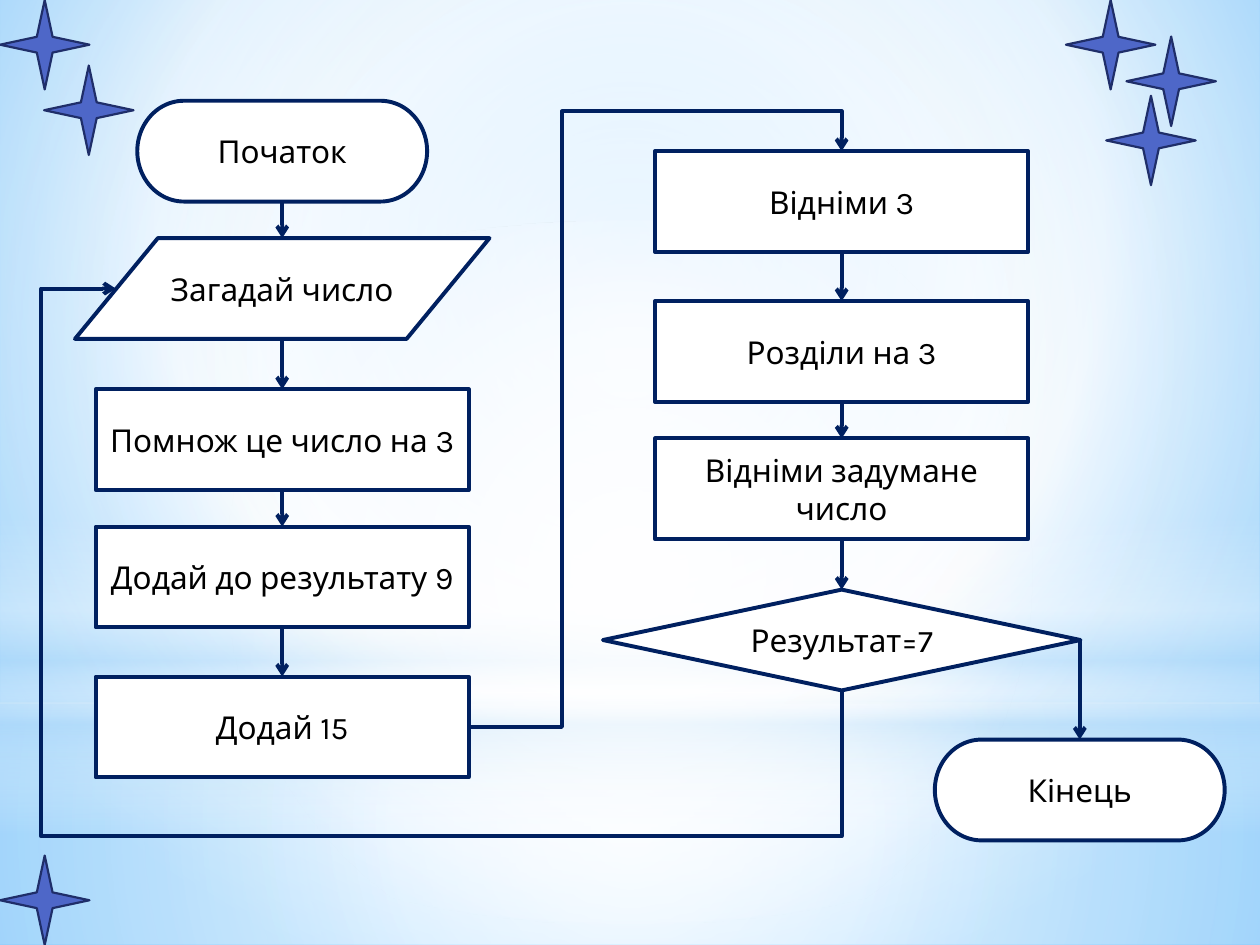
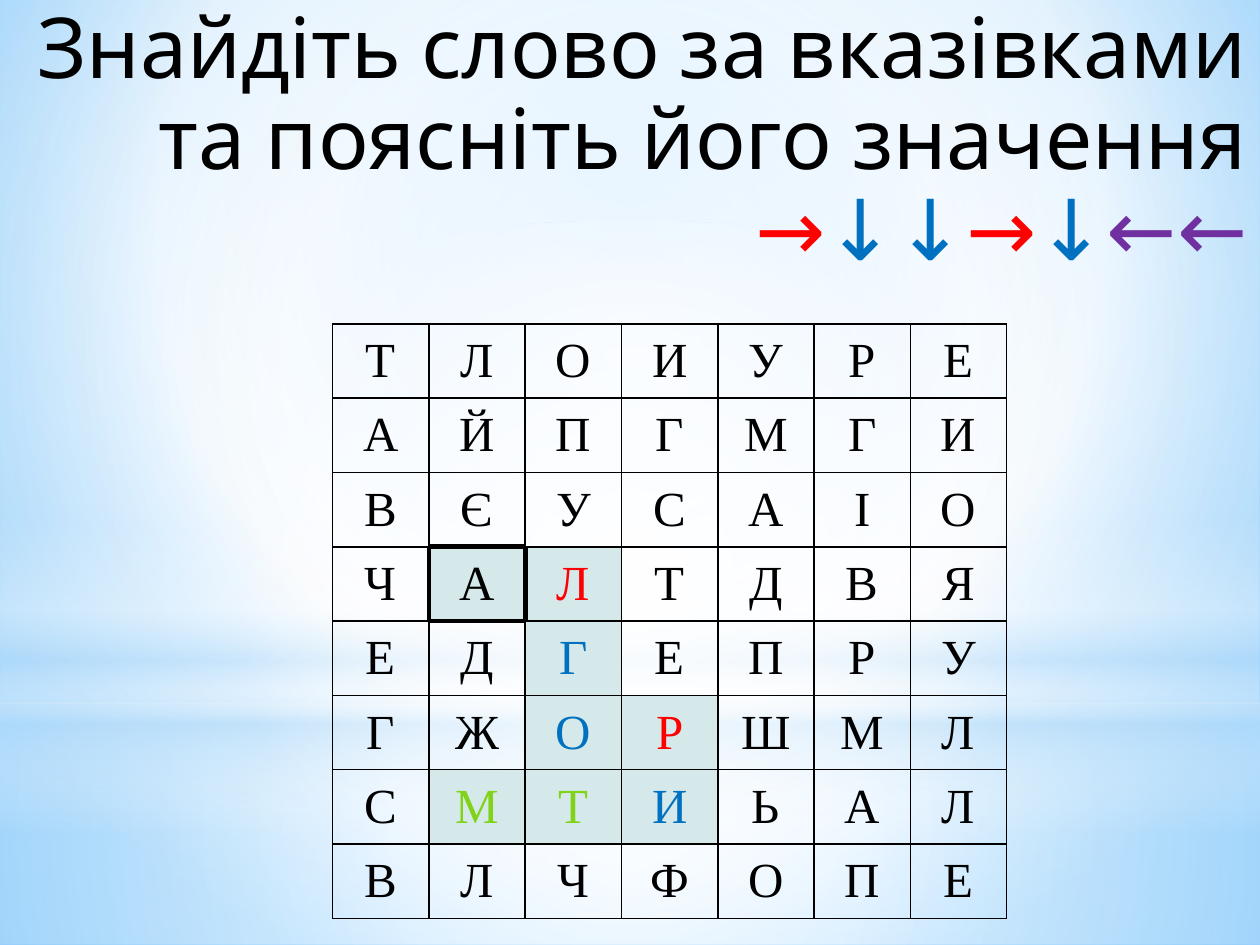
import pptx
import pptx.dml.color
import pptx.enum.shapes
import pptx.enum.text
import pptx.oxml
import pptx.oxml.ns
import pptx.util

Inches = pptx.util.Inches
Pt = pptx.util.Pt
RGBColor = pptx.dml.color.RGBColor
MSO_SHAPE = pptx.enum.shapes.MSO_SHAPE
MSO_CONNECTOR = pptx.enum.shapes.MSO_CONNECTOR
PP_ALIGN = pptx.enum.text.PP_ALIGN
MSO_ANCHOR = pptx.enum.text.MSO_ANCHOR
qn = pptx.oxml.ns.qn

WHITE = RGBColor(0xFF, 0xFF, 0xFF)
BLACK = RGBColor(0, 0, 0)
NAVY = RGBColor(0x00, 0x20, 0x60)
STAR_FILL = RGBColor(0x4E, 0x67, 0xC8)
STAR_LINE = RGBColor(0x1F, 0x2E, 0x69)
RED = RGBColor(0xFF, 0, 0)
BLUE = RGBColor(0x00, 0x70, 0xC0)
PURPLE = RGBColor(0x70, 0x30, 0xA0)
GREEN = RGBColor(0x81, 0xD3, 0x1A)
ROUTE_FILL = RGBColor(0xD6, 0xE9, 0xEA)
SKY = RGBColor(0x9E, 0xD5, 0xFF)
DEEP_SKY = RGBColor(0x5B, 0xB9, 0xFF)
PALE_SKY = RGBColor(0xB4, 0xDC, 0xFA)

STEP_TEXT = {"name": "Karla", "size": Pt(18)}
TITLE_TEXT = {"name": "Karla", "size": Pt(48)}
LETTER_TEXT = {"name": "Times New Roman", "size": Pt(28)}

CENTRE = (50, 50, 50, 50)
BACKDROP = [(0, SKY, 100), (60, WHITE, 100), (100, DEEP_SKY, 100)]
BANDS = [
    (MSO_SHAPE.RECTANGLE, 5.58, 1.92, CENTRE,
     [(0, WHITE, 91), (37, WHITE, 76), (100, PALE_SKY, 79)]),
    (MSO_SHAPE.RECTANGLE, 0, 5.58, CENTRE,
     [(0, WHITE, 89), (48, WHITE, 62), (100, PALE_SKY, 79)]),
    (MSO_SHAPE.RECTANGLE, 4.12, 2.5, None,
     [(0, WHITE, 0), (29, WHITE, 30), (45, PALE_SKY, 40),
      (55, WHITE, 26), (65, PALE_SKY, 60), (100, WHITE, 0)]),
    (MSO_SHAPE.OVAL, 1.75, 5.58, CENTRE, [(0, WHITE, 100), (56, WHITE, 0)]),
]

STEP_HEIGHT = 0.8
LEFT_AXIS, RIGHT_AXIS = 2.24, 6.68
TERMINATOR = (MSO_SHAPE.FLOWCHART_TERMINATOR, 2.3)
INPUT = (MSO_SHAPE.FLOWCHART_DATA, 3.29)
ACTION = (MSO_SHAPE.RECTANGLE, 2.96)
DECISION = (MSO_SHAPE.FLOWCHART_DECISION, 3.79)
LEFT_STEPS = [
    (0.8, TERMINATOR, "Початок"),
    (1.89, INPUT, "Загадай число"),
    (3.09, ACTION, "Помнож це число на 3"),
    (4.18, ACTION, "Додай до результату 9"),
    (5.37, ACTION, "Додай 15"),
]
RIGHT_STEPS = [
    (1.2, ACTION, "Відніми 3"),
    (2.39, ACTION, "Розділи на 3"),
    (3.48, ACTION, "Відніми задумане число"),
    (4.68, DECISION, "Результат=7"),
]
STAR_SIZE = 0.71
STARS = [(8.94, 0.29), (8.78, 0.76), (8.46, 0), (0, 6.79), (0, 0), (0.35, 0.52)]

LETTERS = ["ТЛОИУРЕ", "АЙПГМГИ", "ВЄУСАІО", "ЧАЛТДВЯ",
           "ЕДГЕПРУ", "ГЖОРШМЛ", "СМТИЬАЛ", "ВЛЧФОПЕ"]
START = (3, 1)
ROUTE = "→↓↓→↓←←"
MOVES = {"→": (0, 1), "↓": (1, 0), "←": (0, -1)}
ARROW_COLOURS = {"→": RED, "↓": BLUE, "←": PURPLE}
LETTER_COLOURS = {"→": RED, "↓": BLUE, "←": GREEN}


def add_xml(parent, tag, **attributes):
    element = parent.makeelement(qn(tag), {k: str(v) for k, v in attributes.items()})
    parent.append(element)
    return element


def set_gradient(fill, owner, stops, focus):
    fill.gradient()
    gradient = next(owner.iter(qn("a:gradFill")))
    gradient.clear()
    stop_list = add_xml(gradient, "a:gsLst")
    for position, colour, opacity in stops:
        stop = add_xml(stop_list, "a:gs", pos=position * 1000)
        tint = add_xml(stop, "a:srgbClr", val=colour)
        if opacity < 100:
            add_xml(tint, "a:alpha", val=opacity * 1000)
    if focus:
        sides = {side: value * 1000 for side, value in zip("ltrb", focus)}
        add_xml(add_xml(gradient, "a:path", path="circle"), "a:fillToRect", **sides)
    else:
        add_xml(gradient, "a:lin", ang=90 * 60000, scaled=0)


class Deck:
    def __init__(self):
        self.show = pptx.Presentation()
        self.show.slide_width, self.show.slide_height = Inches(10), Inches(7.5)
        self.slide = None

    def new_slide(self, layout):
        self.slide = self.show.slides.add_slide(self.show.slide_layouts[layout])

    def dress_master(self):
        master = self.show.slide_master
        set_gradient(master.background.fill, master.element, BACKDROP, (20, 10, 20, 60))
        tree = master.shapes.element if hasattr(master.shapes, "element") else None
        tree = master.element.cSld.spTree if tree is None else tree
        for order, (kind, top, height, focus, stops) in enumerate(BANDS):
            band = self.shape(kind, 0, top, 10, height, WHITE)
            set_gradient(band.fill, band.element.spPr, stops, focus)
            band.element.nvSpPr.cNvPr.set("id", str(100 + order))
            tree.insert(2 + order, band.element)

    def style(self, font, look, colour):
        for name, value in look.items():
            setattr(font, name, value)
        font.color.rgb = colour

    def shape(self, kind, left, top, width, height, fill, line=None, weight=0):
        shape = self.slide.shapes.add_shape(
            kind, Inches(left), Inches(top), Inches(width), Inches(height))
        shape.shadow.inherit = False
        shape.fill.solid()
        shape.fill.fore_color.rgb = fill
        if line is None:
            shape.line.fill.background()
        else:
            shape.line.color.rgb = line
            shape.line.width = Pt(weight)
        return shape

    def step(self, axis, top, form, wording):
        kind, width = form
        step = self.shape(kind, axis - width / 2, top, width, STEP_HEIGHT, WHITE, NAVY, 2.25)
        step.text_frame.vertical_anchor = MSO_ANCHOR.MIDDLE
        paragraph = step.text_frame.paragraphs[0]
        paragraph.alignment = PP_ALIGN.CENTER
        run = paragraph.add_run()
        run.text = wording
        self.style(run.font, STEP_TEXT, BLACK)

    def column(self, axis, steps):
        for top, form, wording in steps:
            self.step(axis, top, form, wording)
        for upper, lower in zip(steps, steps[1:]):
            self.arrow(axis, upper[0] + STEP_HEIGHT, axis, lower[0])

    def arrow(self, x1, y1, x2, y2, kind=MSO_CONNECTOR.STRAIGHT):
        arrow = self.slide.shapes.add_connector(
            kind, Inches(x1), Inches(y1), Inches(x2), Inches(y2))
        arrow.line.color.rgb = NAVY
        arrow.line.width = Pt(2.25)
        properties = arrow.element.spPr
        add_xml(properties.find(qn("a:ln")), "a:tailEnd", type="arrow")
        add_xml(properties, "a:effectLst")
        return arrow

    def elbow(self, x1, y1, x2, y2, bends, turn=0):
        properties = self.arrow(x1, y1, x2, y2, MSO_CONNECTOR.ELBOW).element.spPr
        properties.find(qn("a:xfrm")).set("rot", str(turn * 60000))
        geometry = properties.find(qn("a:prstGeom"))
        geometry.set("prst", "bentConnector4")
        guides = geometry.find(qn("a:avLst"))
        for number, bend in enumerate(bends, 1):
            add_xml(guides, "a:gd", name=f"adj{number}", fmla=f"val {round(bend * 100000)}")

    def title(self, wording, arrows):
        title = self.slide.shapes.title
        title.left, title.top = Inches(0), Inches(0)
        title.width, title.height = Inches(10), Inches(2.49)
        frame = title.text_frame
        frame.word_wrap = True
        frame.auto_size = pptx.enum.text.MSO_AUTO_SIZE.NONE
        frame.vertical_anchor = MSO_ANCHOR.TOP
        paragraph = frame.paragraphs[0]
        paragraph.alignment = PP_ALIGN.RIGHT
        paragraph.line_spacing = 0.9
        indents = paragraph._p.get_or_add_pPr()
        indents.set("marL", str(Inches(0.25)))
        indents.set("indent", str(Inches(-0.2)))
        for text, colour in [(wording, BLACK)] + [(a, ARROW_COLOURS[a]) for a in arrows]:
            run = paragraph.add_run()
            run.text = text
            self.style(run.font, TITLE_TEXT, colour)
            if text == wording:
                paragraph.add_line_break()

    def letter_grid(self, left, top, width, height, route):
        rows, columns = len(LETTERS), len(LETTERS[0])
        grid = self.slide.shapes.add_table(
            rows, columns, Inches(left), Inches(top), Inches(width), Inches(height)).table
        grid.first_row = grid.horz_banding = False
        for r, line in enumerate(LETTERS):
            for c, letter in enumerate(line):
                self.letter(grid.cell(r, c), letter, (r, c), route)

    def letter(self, cell, letter, place, route):
        cell.vertical_anchor = MSO_ANCHOR.MIDDLE
        cell.margin_left = cell.margin_right = Inches(0.07)
        cell.margin_top = cell.margin_bottom = 0
        paragraph = cell.text_frame.paragraphs[0]
        paragraph.alignment = PP_ALIGN.CENTER
        run = paragraph.add_run()
        run.text = letter
        self.style(run.font, LETTER_TEXT, route.get(place, BLACK))
        r, c = place
        neighbours = {"L": (r, c - 1), "R": (r, c + 1), "T": (r - 1, c), "B": (r + 1, c)}
        for side, neighbour in neighbours.items():
            weight = 3 if START in (place, neighbour) else 1
            border = add_xml(cell._tc.get_or_add_tcPr(), f"a:ln{side}", w=Pt(weight))
            add_xml(add_xml(border, "a:solidFill"), "a:srgbClr", val=BLACK)
        if place in route:
            cell.fill.solid()
            cell.fill.fore_color.rgb = ROUTE_FILL
        else:
            cell.fill.background()


def trace_route():
    place = START
    colours = {START: BLACK}
    for move in ROUTE:
        place = tuple(a + b for a, b in zip(place, MOVES[move]))
        colours[place] = LETTER_COLOURS[move]
    return colours


def main():
    deck = Deck()

    deck.new_slide(6)
    deck.dress_master()
    deck.column(LEFT_AXIS, LEFT_STEPS)
    deck.column(RIGHT_AXIS, RIGHT_STEPS)
    deck.step(8.57, 5.87, TERMINATOR, "Кінець")
    deck.arrow(8.57, 5.07, 8.57, 5.87)
    deck.elbow(3.72, 5.77, 6.68, 1.2, (0.25, 1.069))
    deck.elbow(5.39, 1, 2.21, 6.76, (-0.367, 1.103), turn=90)
    for left, top in STARS:
        deck.shape(MSO_SHAPE.STAR_4_POINT, left, top, STAR_SIZE, STAR_SIZE,
                   STAR_FILL, STAR_LINE, 1.25)

    deck.new_slide(5)
    deck.title("Знайдіть слово за вказівками та поясніть його значення", ROUTE)
    deck.letter_grid(2.64, 2.57, 5.35, 4.72, trace_route())

    deck.show.save("out.pptx")


if __name__ == "__main__":
    main()
